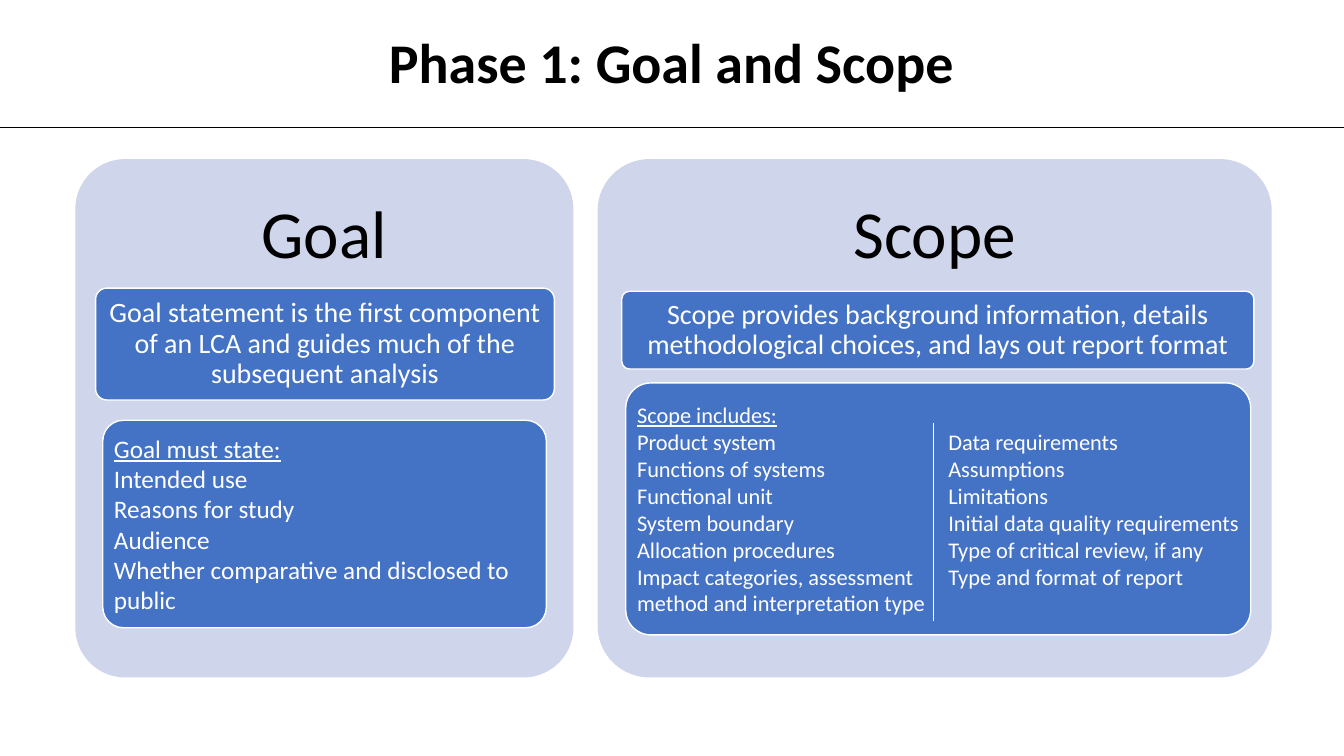
"""Build the Phase 1 slide with its Goal and Scope panels."""
import dataclasses

import lxml.etree
import pptx
import pptx.dml.color
import pptx.enum.shapes
import pptx.enum.text
import pptx.oxml.ns
import pptx.util

Cm = pptx.util.Cm
Pt = pptx.util.Pt
qn = pptx.oxml.ns.qn
Align = pptx.enum.text.PP_ALIGN
Anchor = pptx.enum.text.MSO_ANCHOR

FONT = "Calibri"
BLACK, WHITE, PALE, BLUE = "000000", "FFFFFF", "CFD5EA", "4472C4"
WIDTH, HEIGHT = 33.87, 19.05
TOP, TALL, HEAD = 4.01, 13.06, 3.91


@dataclasses.dataclass(frozen=True)
class Box:
    left: float
    top: float
    width: float
    height: float

    def cm(self) -> list:
        return [Cm(n) for n in dataclasses.astuple(self)]


@dataclasses.dataclass(frozen=True)
class Text:
    lines: tuple
    size: float
    color: str = WHITE
    center: bool = False
    bold: bool = False
    under: bool = False
    pads: tuple = (0.25, 0.13, 0.25, 0.13)
    anchor: Anchor = Anchor.MIDDLE


@dataclasses.dataclass(frozen=True)
class Card:
    box: Box
    text: Text


@dataclasses.dataclass(frozen=True)
class Panel:
    name: str
    left: float
    width: float
    cards: tuple


def rgb(code: str) -> pptx.dml.color.RGBColor:
    return pptx.dml.color.RGBColor.from_string(code)


def write(shape, text: Text) -> None:
    frame = shape.text_frame
    frame.word_wrap = True
    frame.vertical_anchor = text.anchor
    frame.margin_left, frame.margin_top, frame.margin_right, frame.margin_bottom = map(Cm, text.pads)
    for i, line in enumerate(text.lines):
        para = frame.add_paragraph() if i else frame.paragraphs[0]
        para.text = line
        para.alignment = Align.CENTER if text.center else Align.LEFT
        para.line_spacing = 0.9 if text.center else 1.0
        for run in para.runs:
            font = run.font
            font.name, font.size, font.bold = FONT, Pt(text.size), text.bold
            font.underline = text.under and i == 0
            font.color.rgb = rgb(text.color)
        for gap in para._p.findall(qn("a:br")):
            lxml.etree.SubElement(gap, qn("a:rPr"), sz=str(text.size * 100))


def label(slide, box: Box, text: Text) -> None:
    write(slide.shapes.add_textbox(*box.cm()), text)


def block(slide, box: Box, fill: str, edge: str = ""):
    kind = pptx.enum.shapes.MSO_SHAPE.ROUNDED_RECTANGLE
    shape = slide.shapes.add_shape(kind, *box.cm())
    shape.adjustments[0] = 0.1
    shape.shadow.inherit = False
    shape.fill.solid()
    shape.fill.fore_color.rgb = rgb(fill)
    if edge:
        shape.line.color.rgb = rgb(edge)
        shape.line.width = Pt(1)
    else:
        shape.line.fill.background()
    return shape


def rule(slide, ends: tuple, color: str) -> None:
    kind = pptx.enum.shapes.MSO_CONNECTOR.STRAIGHT
    line = slide.shapes.add_connector(kind, *map(Cm, ends))
    line.line.color.rgb = rgb(color)
    line.line.width = Pt(0.5)
    lxml.etree.SubElement(line._element.spPr, qn("a:effectLst"))


def draw(slide, panel: Panel) -> None:
    block(slide, Box(panel.left, TOP, panel.width, TALL), PALE)
    head = Text((panel.name,), 48, BLACK, center=True, pads=(0.51,) * 4)
    label(slide, Box(panel.left, TOP, panel.width, HEAD), head)
    for card in panel.cards:
        write(block(slide, card.box, BLUE, WHITE), card.text)


def brief(line: str) -> Text:
    return Text((line,), 20, center=True, pads=(0.15, 0.1, 0.15, 0.1))


PANELS = (
    Panel("Goal", 1.9, 12.55, (
        Card(Box(2.41, 7.26, 11.56, 2.82), brief(
            "Goal statement is the first component of an LCA and guides much of the subsequent analysis")),
        Card(Box(2.59, 10.59, 11.18, 5.23), Text((
            "Goal must state:",
            "Intended use",
            "Reasons for study",
            "Audience",
            "Whether comparative and disclosed to public",
        ), 18, under=True, pads=(0.13, 0.1, 0.13, 0.1))),
    )),
    Panel("Scope", 15.06, 16.99, (
        Card(Box(15.67, 7.34, 15.93, 1.96), brief(
            "Scope provides background information, details methodological choices, and lays out report format")),
        Card(Box(15.77, 9.65, 15.75, 6.35), Text((
            "Scope includes:",
            "Product system",
            "Functions of systems",
            "Functional unit",
            "System boundary",
            "Allocation procedures",
            "Impact categories, assessment \nmethod and interpretation type",
        ), 16, under=True, pads=(0.1, 0.08, 0.1, 0.08))),
    )),
)

MORE = Text((
    "Data requirements",
    "Assumptions",
    "Limitations",
    "Initial data quality requirements",
    "Type of critical review, if any",
    "Type and format of report",
), 16, pads=(1.52, 0.13, 0.25, 0.13), anchor=Anchor.TOP)


def main() -> None:
    deck = pptx.Presentation()
    deck.slide_width, deck.slide_height = Cm(WIDTH), Cm(HEIGHT)
    slide = deck.slides.add_slide(deck.slide_layouts[6])
    title = Text(("Phase 1: Goal and Scope",), 40, BLACK, center=True, bold=True)
    label(slide, Box(7.37, 0.76, 19.1, 1.8), title)
    for panel in PANELS:
        draw(slide, panel)
    label(slide, Box(22.38, 10.67, 10.03, 4.37), MORE)
    rule(slide, (23.52, 10.67, 23.52, 15.65), WHITE)
    rule(slide, (0, 3.2, WIDTH, 3.2), BLACK)
    deck.save("out.pptx")


if __name__ == "__main__":
    main()
